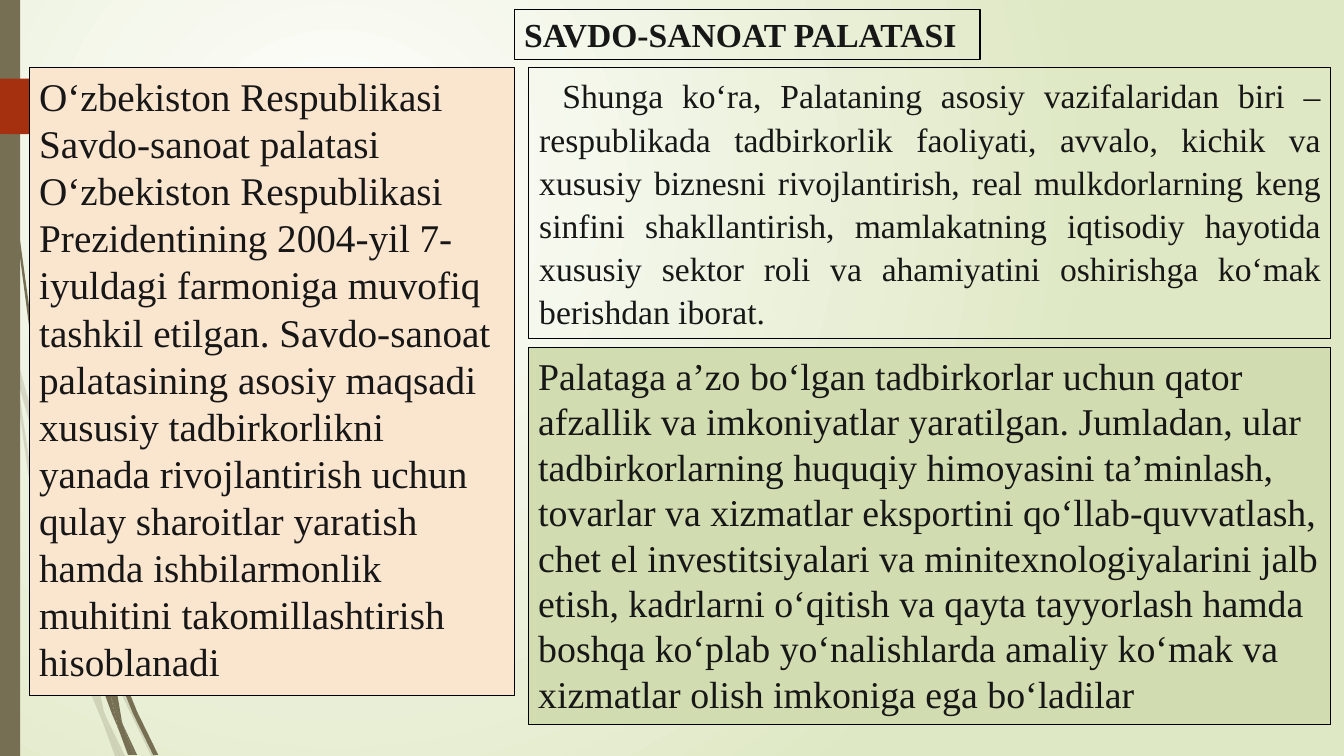
from lxml import etree
from pptx import Presentation
from pptx.dml.color import RGBColor
from pptx.enum.shapes import MSO_SHAPE
from pptx.enum.text import MSO_ANCHOR, PP_ALIGN
from pptx.oxml import parse_xml
from pptx.oxml.ns import nsdecls, qn
from pptx.util import Inches, Pt

RECT, TOP = MSO_SHAPE.RECTANGLE, MSO_ANCHOR.TOP
LEFT, JUSTIFY = PP_ALIGN.LEFT, PP_ALIGN.JUSTIFY

# The grid has 100 cells to the inch.
COLS, ROWS = 1333, 750
CELL = Inches(0.01)
FONT, INK, BLACK = "Times New Roman", "181717", "000000"
BROWN, RED, PEACH, GREEN = "766F54", "A53010", "FAE5CF", "D1DDB0"

RIGHT, WIDE, HEAD = 524, 796, 67

PALE = [
    [(11, 350), (9, 322), (0, 282), (0, 299), (10, 344)],
    [(58, 522), (84, 599), (85, 586), (62, 520), (14, 345), (17, 376)],
    [(92, 607), (88, 596), (88, 610), (123, 694), (150, 750), (155, 750),
     (127, 692)],
    [(119, 750), (124, 750), (105, 711)],
    [(93, 683), (70, 619), (31, 469), (17, 376), (11, 350), (28, 470),
     (65, 621), (92, 693), (101, 714), (99, 707)],
    [(84, 599), (87, 646), (93, 683), (96, 692), (105, 711), (103, 706),
     (91, 646), (88, 610), (88, 608)],
    [(101, 714), (114, 750), (119, 750)],
    [(96, 692), (93, 683), (99, 707), (101, 714), (119, 750), (105, 711)],
]
DARK = [
    [(7, 110), (17, 233), (33, 355), (56, 477), (57, 481), (55, 457),
     (55, 453), (36, 355), (19, 232), (8, 109), (5, 48), (4, 0), (3, 0),
     (4, 48)],
    [(113, 649), (110, 641), (111, 656), (132, 708), (152, 749), (157, 749),
     (136, 706)],
    [(110, 691), (98, 657), (72, 556), (64, 505), (57, 477), (68, 557),
     (93, 659), (111, 708), (117, 722), (116, 717)],
    [(133, 749), (136, 749), (122, 719)],
    [(117, 722), (127, 749), (131, 749)],
    [(106, 645), (110, 691), (116, 706), (122, 719), (121, 716), (111, 656),
     (109, 651)],
    [(116, 706), (110, 691), (116, 717), (117, 722), (130, 749), (133, 749),
     (122, 719)],
]
TAB = [(173, 108), (148, 133), (146, 134), (136, 134), (0, 133), (0, 78),
       (136, 78), (146, 78), (148, 79), (173, 104), (174, 106)]

TITLE = "SAVDO-SANOAT PALATASI"
ORIGIN = (
    "O‘zbekiston Respublikasi Savdo-sanoat palatasi O‘zbekiston Respublikasi "
    "Prezidentining 2004-yil 7-iyuldagi farmoniga muvofiq tashkil etilgan. "
    "Savdo-sanoat palatasining asosiy maqsadi xususiy tadbirkorlikni yanada "
    "rivojlantirish uchun qulay sharoitlar yaratish hamda ishbilarmonlik "
    "muhitini takomillashtirish hisoblanadi")
TASKS = (
    "Shunga ko‘ra, Palataning asosiy vazifalaridan biri – respublikada "
    "tadbirkorlik faoliyati, avvalo, kichik va xususiy biznesni "
    "rivojlantirish, real mulkdorlarning keng sinfini shakllantirish, "
    "mamlakatning iqtisodiy hayotida xususiy sektor roli va ahamiyatini "
    "oshirishga ko‘mak berishdan iborat.")
PERKS = (
    "Palataga a’zo bo‘lgan tadbirkorlar uchun qator afzallik va imkoniyatlar "
    "yaratilgan. Jumladan, ular tadbirkorlarning huquqiy himoyasini "
    "ta’minlash, tovarlar va xizmatlar eksportini qo‘llab-quvvatlash, chet "
    "el investitsiyalari va minitexnologiyalarini jalb etish, kadrlarni "
    "o‘qitish va qayta tayyorlash hamda boshqa ko‘plab yo‘nalishlarda amaliy "
    "ko‘mak va xizmatlar olish imkoniga ega bo‘ladilar")


def color(code):
    return RGBColor.from_string(code)


def assign(target, **values):
    for name, value in values.items():
        setattr(target, name, value)


def paint(shape, fill=None, line=None):
    shape.shadow.inherit = False
    if fill:
        shape.fill.solid()
        shape.fill.fore_color.rgb = color(fill)
    else:
        shape.fill.background()
    if line:
        shape.line.color.rgb = color(line)
        shape.line.width = Pt(0.75)
    else:
        shape.line.fill.background()


def block(slide, area, fill=None, line=None):
    shape = slide.shapes.add_shape(RECT, *(n * CELL for n in area))
    paint(shape, fill, line)
    return shape


def outline(slide, points, fill, alpha=100):
    """Draw a closed shape through grid points; alpha is in percent."""
    pen = slide.shapes.build_freeform(*points[0], scale=CELL)
    pen.add_line_segments(points[1:], close=True)
    shape = pen.convert_to_shape()
    paint(shape, fill)
    if alpha < 100:
        tint = shape.fill._xPr.find(".//" + qn("a:srgbClr"))
        etree.SubElement(tint, qn("a:alpha"), val=str(alpha * 1000))


def panel(slide, area, text, size, fill=None, bold=False, **layout):
    """Draw a framed text panel; layout holds paragraph settings."""
    frame = block(slide, area, fill, BLACK).text_frame
    assign(frame, word_wrap=True, vertical_anchor=TOP)
    para = frame.paragraphs[0]
    assign(para, **{"alignment": LEFT, **layout})
    run = para.add_run()
    run.text = text
    assign(run.font, name=FONT, size=Pt(size), bold=bold)
    run.font.color.rgb = color(INK)
    return para


def backdrop(slide):
    """Set a round gradient that is lightest at the upper left."""
    fill = slide.background.fill
    fill.gradient()
    for stop, code in zip(fill.gradient_stops, ("FFFFFF", "DFE8C4")):
        stop.color.rgb = color(code)
    lin = slide.element.find(".//" + qn("a:lin"))
    lin.getparent().replace(lin, parse_xml(
        f'<a:path {nsdecls("a")} path="circle"><a:fillToRect l="50000" '
        't="50000" r="100000" b="100000"/></a:path>'))


def main():
    deck = Presentation()
    assign(deck, slide_width=COLS * CELL, slide_height=ROWS * CELL)
    slide = deck.slides.add_slide(deck.slide_layouts[6])
    backdrop(slide)
    for group, alpha in ((PALE, 20), (DARK, 100)):
        for points in group:
            outline(slide, points, BROWN, alpha)
    block(slide, (0, 0, 20, ROWS), BROWN)
    outline(slide, TAB, RED)

    panel(slide, (29, HEAD, 481, 623), ORIGIN, 28, PEACH)
    tasks = panel(slide, (RIGHT, HEAD, WIDE, 269), TASKS, 24,
                  alignment=JUSTIFY, line_spacing=1.07, space_after=Pt(2.8))
    props = tasks._p.get_or_add_pPr()
    props.set("marL", str(CELL))
    props.set("indent", str(23 * CELL))
    panel(slide, (510, 9, 462, 50), TITLE, 24, bold=True)
    panel(slide, (RIGHT, 345, WIDE, 374), PERKS, 27, GREEN)
    deck.save("out.pptx")


if __name__ == "__main__":
    main()
